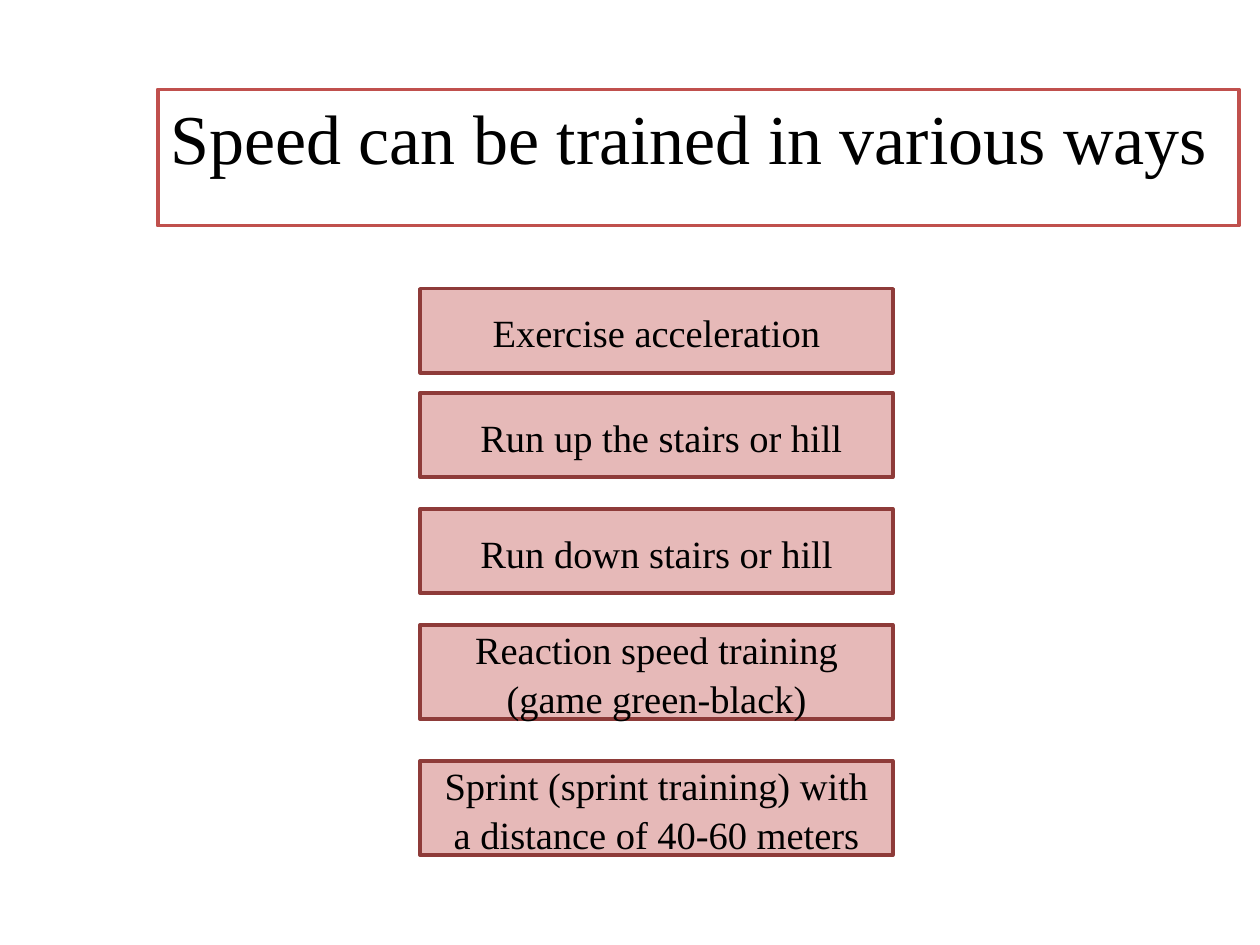
from pptx import Presentation
from pptx.dml.color import RGBColor
from pptx.enum.shapes import MSO_SHAPE as Shape
from pptx.enum.text import MSO_ANCHOR as Anchor, MSO_AUTO_SIZE as AutoSize, PP_ALIGN as Align
from pptx.util import Cm, Pt

WHITE = RGBColor(0xFF, 0xFF, 0xFF)
BLACK = RGBColor(0x00, 0x00, 0x00)
RED = RGBColor(0xC0, 0x50, 0x4D)
DARK_RED = RGBColor(0x8E, 0x3B, 0x39)
PINK = RGBColor(0xE6, 0xB9, 0xB8)

TITLE_FRAME = {"vertical_anchor": Anchor.TOP, "margin_top": Cm(0.1)}
TITLE_PARAGRAPH = {"alignment": Align.LEFT}
METHOD_FRAME = {"vertical_anchor": Anchor.MIDDLE}
METHOD_PARAGRAPH = {"alignment": Align.CENTER, "line_spacing": 1.07}
METHODS = [
    ("Exercise acceleration", 5.82, 1.7),
    (" Run up the stairs or hill", 7.92, 1.7),
    ("Run down stairs or hill", 10.26, 1.7),
    ("Reaction speed training (game green-black)", 12.6, 1.9),
    ("Sprint (sprint training) with a distance of 40-60 meters", 15.34, 1.9),
]


def set_values(target, values):
    """Set each named attribute of the target."""
    for name, value in values.items():
        setattr(target, name, value)


def paint(shape, fill_color, line_color):
    """Give the shape a solid fill and an outline."""
    shape.fill.solid()
    shape.fill.fore_color.rgb = fill_color
    shape.line.color.rgb = line_color
    shape.line.width = Pt(2)


def write(shape, text, size, frame_values, paragraph_values):
    """Write one formatted paragraph into the shape."""
    frame = shape.text_frame
    set_values(frame, {"word_wrap": True, "auto_size": AutoSize.NONE, **frame_values})
    paragraph = frame.paragraphs[0]
    paragraph.text = text
    set_values(paragraph, paragraph_values)
    set_values(paragraph.font, {"name": "Times New Roman", "size": Pt(size)})
    paragraph.font.color.rgb = BLACK


def add_title(slide, text):
    """Place and format the title placeholder."""
    title = slide.shapes.title
    set_values(title, {"left": Cm(3.18), "top": Cm(1.8), "width": Cm(21.8), "height": Cm(2.75)})
    paint(title, WHITE, RED)
    write(title, text, 40, TITLE_FRAME, TITLE_PARAGRAPH)


def add_method(slide, text, top, height):
    """Add a box naming one training method."""
    box = slide.shapes.add_shape(Shape.RECTANGLE, Cm(8.47), Cm(top), Cm(9.53), Cm(height))
    box.shadow.inherit = False
    paint(box, PINK, DARK_RED)
    write(box, text, 22, METHOD_FRAME, METHOD_PARAGRAPH)


def main():
    """Build and save the slide on speed training."""
    presentation = Presentation()
    set_values(presentation, {"slide_width": Cm(25.4), "slide_height": Cm(19.05)})
    slide = presentation.slides.add_slide(presentation.slide_layouts[5])
    add_title(slide, "Speed can be trained in various ways")
    for text, top, height in METHODS:
        add_method(slide, text, top, height)
    presentation.save("out.pptx")


if __name__ == "__main__":
    main()
